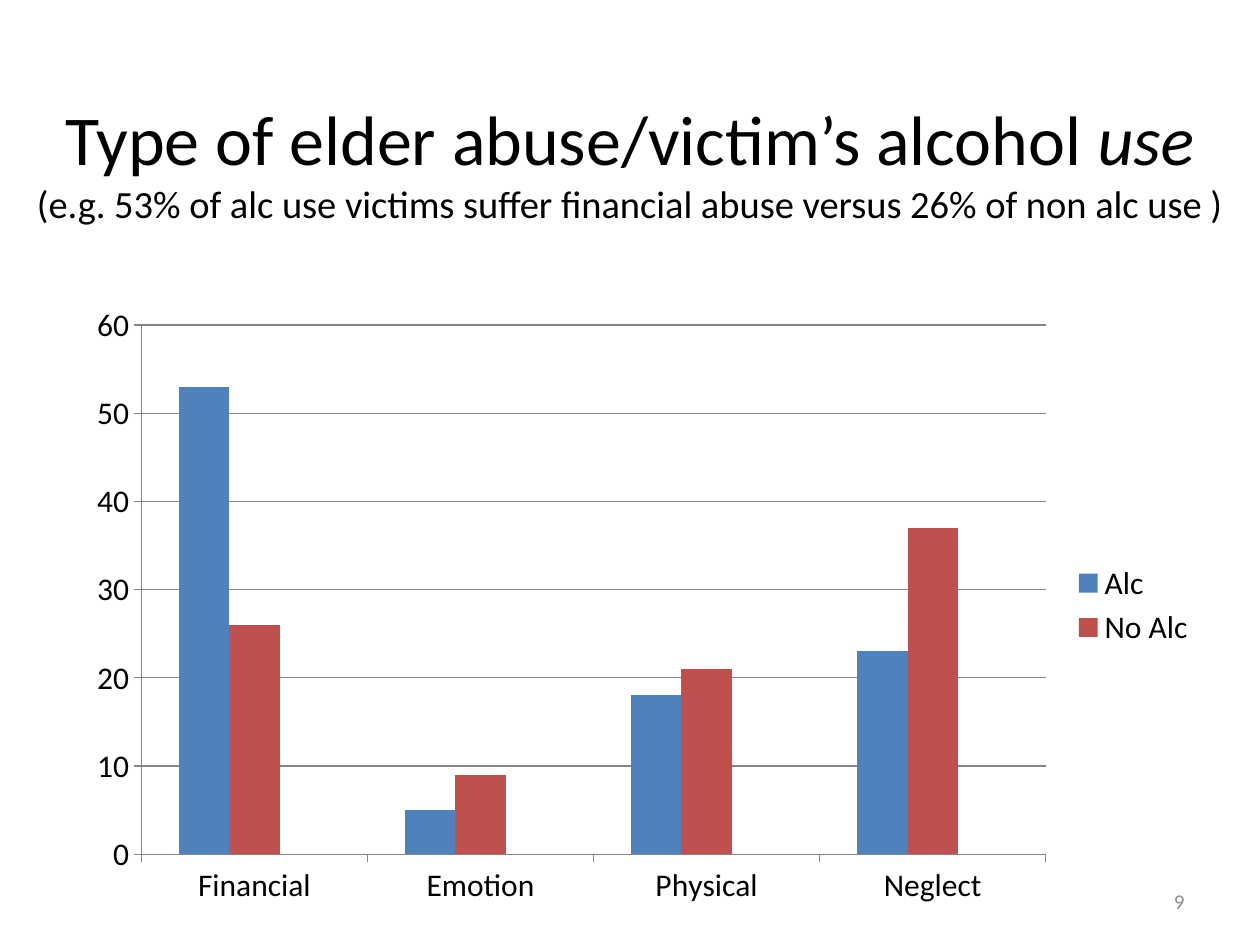
from lxml import etree
from pptx import Presentation
from pptx.chart.data import CategoryChartData
from pptx.dml.color import RGBColor
from pptx.enum import chart as ch, text
from pptx.oxml import ns
from pptx.util import Pt

BLACK = RGBColor(0x00, 0x00, 0x00)
GREY = RGBColor(0x8C, 0x8C, 0x8C)
LINE = RGBColor(0x86, 0x86, 0x86)
BLUE = RGBColor(0x4F, 0x81, 0xBD)
RED = RGBColor(0xC0, 0x50, 0x4D)
GREEN = RGBColor(0x9B, 0xBB, 0x59)
FACE = "Calibri"

# Content: text, size, italic, colour
TITLE = [
    ("Type of elder abuse/victim’s alcohol ", 40, False, BLACK),
    ("use", 40, True, BLACK),
    "break",
    ("(e.g. 53% of alc use victims suffer financial abuse versus 26% of non alc use )",
     22, False, BLACK),
]
NUMBER = [("9", 12, False, GREY)]
KINDS = ["Financial", "Emotion", "Physical", "Neglect"]
SERIES = [
    ("Alc", [53, 5, 18, 23], BLUE),
    ("No Alc", [26, 9, 21, 37], RED),
    ("Series 3", [None] * 4, GREEN),  # empty slot that widens the gaps
]

# Places: left, top, width, height
TITLE_AT = (0, 21.6, 720, 140.4)
CHART_AT = (42.5, 167.75, 648, 356.4)
NUMBER_AT = (516, 500.5, 168, 28.8)


def style(obj, **vals):
    for key, val in vals.items():
        setattr(obj, key, val)


def add_text(slide, at, runs, align):
    frame = slide.shapes.add_textbox(*map(Pt, at)).text_frame
    style(frame, word_wrap=True, vertical_anchor=text.MSO_ANCHOR.MIDDLE)
    para = frame.paragraphs[0]
    para.alignment = align
    for item in runs:
        if item == "break":
            para.add_line_break()
            continue
        words, size, slant, color = item
        run = para.add_run()
        run.text = words
        style(run.font, name=FACE, size=Pt(size), italic=slant)
        run.font.color.rgb = color


def add_bars(slide):
    data = CategoryChartData()
    data.categories = KINDS
    for name, vals, _ in SERIES:
        data.add_series(name, vals)
    chart = slide.shapes.add_chart(
        ch.XL_CHART_TYPE.COLUMN_CLUSTERED, *map(Pt, CHART_AT), data).chart
    style(chart, has_title=False, has_legend=True)
    style(chart.font, name=FACE, size=Pt(18))
    chart.font.color.rgb = BLACK

    # Bars
    plot = chart.plots[0]
    style(plot, gap_width=150, overlap=0, vary_by_categories=False)
    for bars, (_, _, color) in zip(plot.series, SERIES):
        bars.format.fill.solid()
        bars.format.fill.fore_color.rgb = color

    # Axes and grid
    rise = chart.value_axis
    style(rise, minimum_scale=0, maximum_scale=60, major_unit=10,
          has_major_gridlines=True)
    for axis in (chart.category_axis, rise):
        axis.major_tick_mark = ch.XL_TICK_MARK.OUTSIDE
    for part in (chart.category_axis, rise, rise.major_gridlines):
        part.format.line.color.rgb = LINE
        part.format.line.width = Pt(0.75)

    # Legend without the empty series
    legend = chart.legend
    style(legend, position=ch.XL_LEGEND_POSITION.RIGHT, include_in_layout=False)
    entry = etree.Element(ns.qn("c:legendEntry"))
    for tag, val in (("c:idx", len(SERIES) - 1), ("c:delete", 1)):
        etree.SubElement(entry, ns.qn(tag)).set("val", str(val))
    legend._element.find(ns.qn("c:legendPos")).addnext(entry)


def main():
    deck = Presentation()
    style(deck, slide_width=Pt(720), slide_height=Pt(540))
    slide = deck.slides.add_slide(deck.slide_layouts[6])
    add_text(slide, TITLE_AT, TITLE, text.PP_ALIGN.CENTER)
    add_bars(slide)
    add_text(slide, NUMBER_AT, NUMBER, text.PP_ALIGN.RIGHT)
    deck.save("out.pptx")


if __name__ == "__main__":
    main()
